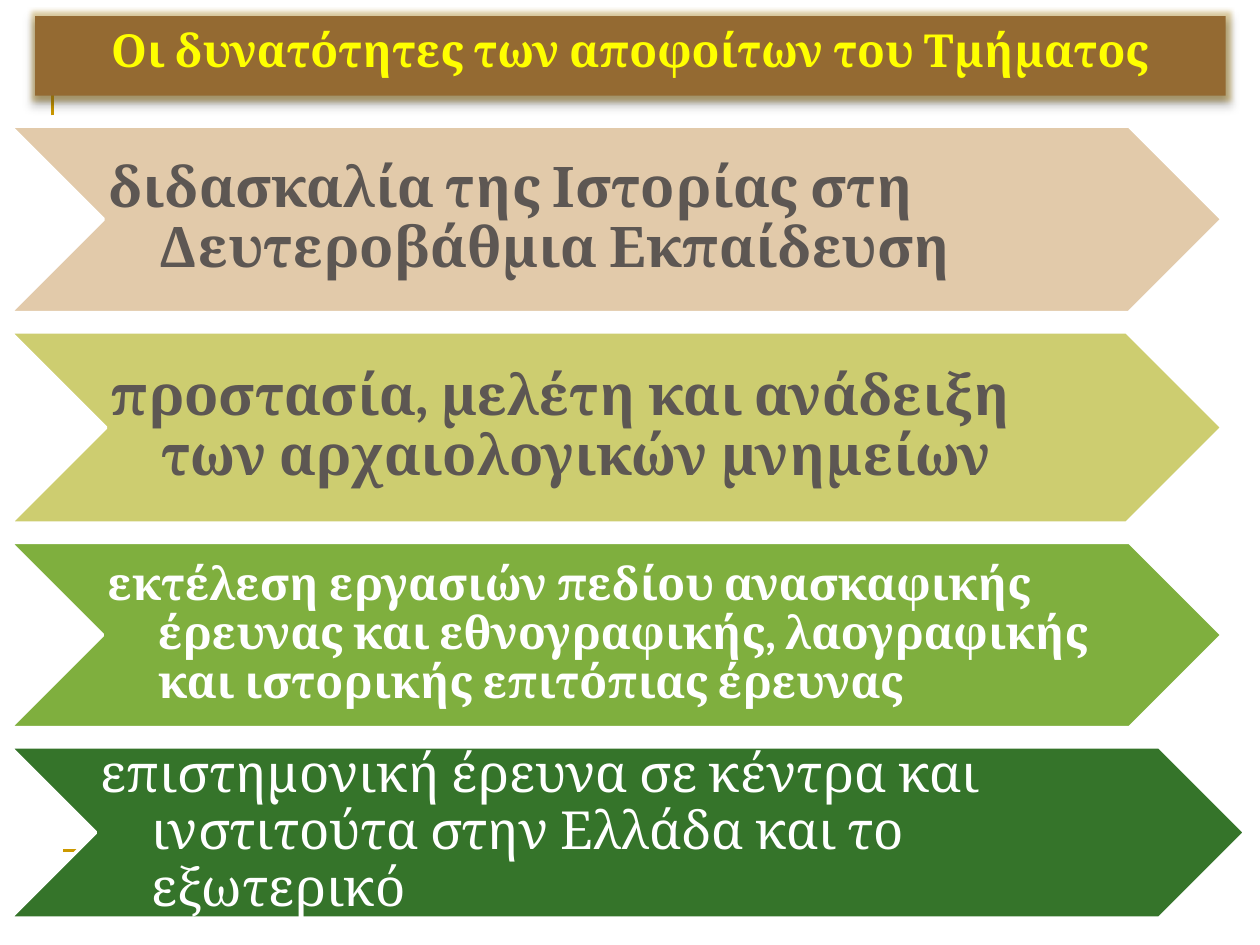
from lxml import etree
from pptx import Presentation
from pptx.dml.color import RGBColor
from pptx.enum import shapes, text
from pptx.oxml import ns, parse_xml
from pptx.util import Pt

COLORS = {
    "gold": "CC9900", "brown": "946A32", "yellow": "FFFF00", "white": "FFFFFF",
    "grey": "5D5753", "sand": "E2CAAA", "olive": "CDCD70", "green": "7FAF3E",
    "forest": "35742A", "halo": "B08A20", "black": "000000",
}
FONT = "Cambria"
TITLE = "Οι δυνατότητες των αποφοίτων του Τμήματος"
LEFT, TOP, GAP = 5.76, 72, 11

# Wording, width, height, fill, text colour, size, bold
PROSPECTS = [
    ("διδασκαλία της Ιστορίας στη Δευτεροβάθμια Εκπαίδευση",
     692.6, 106.6, "sand", "grey", 32, True),
    ("προστασία, μελέτη και ανάδειξη των αρχαιολογικών μνημείων",
     692.6, 109.4, "olive", "grey", 32, True),
    ("εκτέλεση εργασιών πεδίου ανασκαφικής έρευνας και εθνογραφικής, "
     "λαογραφικής και ιστορικής επιτόπιας έρευνας",
     692.6, 105.8, "green", "white", 26, True),
    ("επιστημονική έρευνα σε κέντρα και ινστιτούτα στην Ελλάδα και το εξωτερικό",
     705.6, 97.9, "forest", "white", 30, False),
]
TITLE_EFFECTS = f"""<a:effectLst {ns.nsdecls("a")}>
  <a:glow rad="{Pt(5)}"><a:srgbClr val="{COLORS['halo']}"><a:alpha val="40000"/></a:srgbClr></a:glow>
  <a:outerShdw blurRad="{Pt(4)}" dist="{Pt(3)}" dir="5400000" rotWithShape="0">
    <a:srgbClr val="{COLORS['black']}"><a:alpha val="40000"/></a:srgbClr>
  </a:outerShdw>
</a:effectLst>"""


def rgb(name):
    return RGBColor.from_string(COLORS[name])


class SlideBuilder:
    def __init__(self, slide):
        self.slide = slide
        self.shapes = slide.shapes

    def stroke(self, line, color, width):
        line.color.rgb = rgb(color)
        line.width = Pt(width)

    def font(self, paragraph, size, color, bold):
        font = paragraph.font
        font.name, font.size, font.bold = FONT, Pt(size), bold
        font.color.rgb = rgb(color)

    def corner(self, points):
        start, *rest = points
        outline = self.shapes.build_freeform(Pt(start[0]), Pt(start[1]))
        outline.add_line_segments([(Pt(x), Pt(y)) for x, y in rest], close=False)
        bracket = outline.convert_to_shape()
        bracket.shadow.inherit = False
        bracket.fill.background()
        self.stroke(bracket.line, "gold", 1.5)

    def rule(self, x1, x2, y):
        footer = self.shapes.add_connector(
            shapes.MSO_CONNECTOR.STRAIGHT, Pt(x1), Pt(y), Pt(x2), Pt(y))
        etree.SubElement(footer._element.spPr, ns.qn("a:effectLst"))
        self.stroke(footer.line, "gold", 1.5)

    def title(self, wording, left, top, width, height):
        banner = self.shapes.title
        # Bring the banner in front of the rules drawn so far
        self.shapes[-1]._element.addnext(banner._element)
        banner.left, banner.top = Pt(left), Pt(top)
        banner.width, banner.height = Pt(width), Pt(height)
        banner.fill.solid()
        banner.fill.fore_color.rgb = rgb("brown")
        banner._element.spPr.append(parse_xml(TITLE_EFFECTS))
        frame = banner.text_frame
        frame.text = wording
        frame.auto_size = text.MSO_AUTO_SIZE.NONE
        frame.vertical_anchor = text.MSO_ANCHOR.TOP
        heading = frame.paragraphs[0]
        heading.alignment = text.PP_ALIGN.CENTER
        self.font(heading, 26, "yellow", True)

    def chevron(self, left, top, width, height, fill):
        arrow = self.shapes.add_shape(
            shapes.MSO_SHAPE.CHEVRON, Pt(left), Pt(top), Pt(width), Pt(height))
        arrow.shadow.inherit = False
        arrow.fill.solid()
        arrow.fill.fore_color.rgb = rgb(fill)
        self.stroke(arrow.line, "white", 2)

    def label(self, wording, left, top, width, height, size, color, bold):
        frame = self.shapes.add_textbox(
            Pt(left), Pt(top), Pt(width), Pt(height)).text_frame
        frame.word_wrap = True
        frame.vertical_anchor = text.MSO_ANCHOR.MIDDLE
        frame.margin_left, frame.margin_right = Pt(2.9), 0
        frame.margin_top = frame.margin_bottom = Pt(1.4)
        frame.text = wording
        prospect = frame.paragraphs[0]
        prospect.line_spacing = 0.9
        prospect.space_after = Pt(size * 0.35)
        hanging = prospect._p.get_or_add_pPr()
        hanging.set("marL", str(Pt(28.8)))
        hanging.set("indent", str(-Pt(28.8)))
        self.font(prospect, size, color, bold)


def main():
    prs = Presentation()
    prs.slide_width, prs.slide_height = Pt(720), Pt(540)
    builder = SlideBuilder(prs.slides.add_slide(prs.slide_layouts[5]))

    # Gold rules behind everything
    builder.corner([(30, 66), (30, 18), (678, 18)])
    builder.rule(36, 684, 486)

    # Title banner
    builder.title(TITLE, 20, 9.2, 680.4, 45.4)

    # Stacked chevrons, each label lying between notch and point
    top = TOP
    for wording, width, height, fill, color, size, bold in PROSPECTS:
        builder.chevron(LEFT, top, width, height, fill)
        builder.label(wording, LEFT + height / 2, top, width - height, height,
                      size, color, bold)
        top += height + GAP

    prs.save("out.pptx")


if __name__ == "__main__":
    main()
